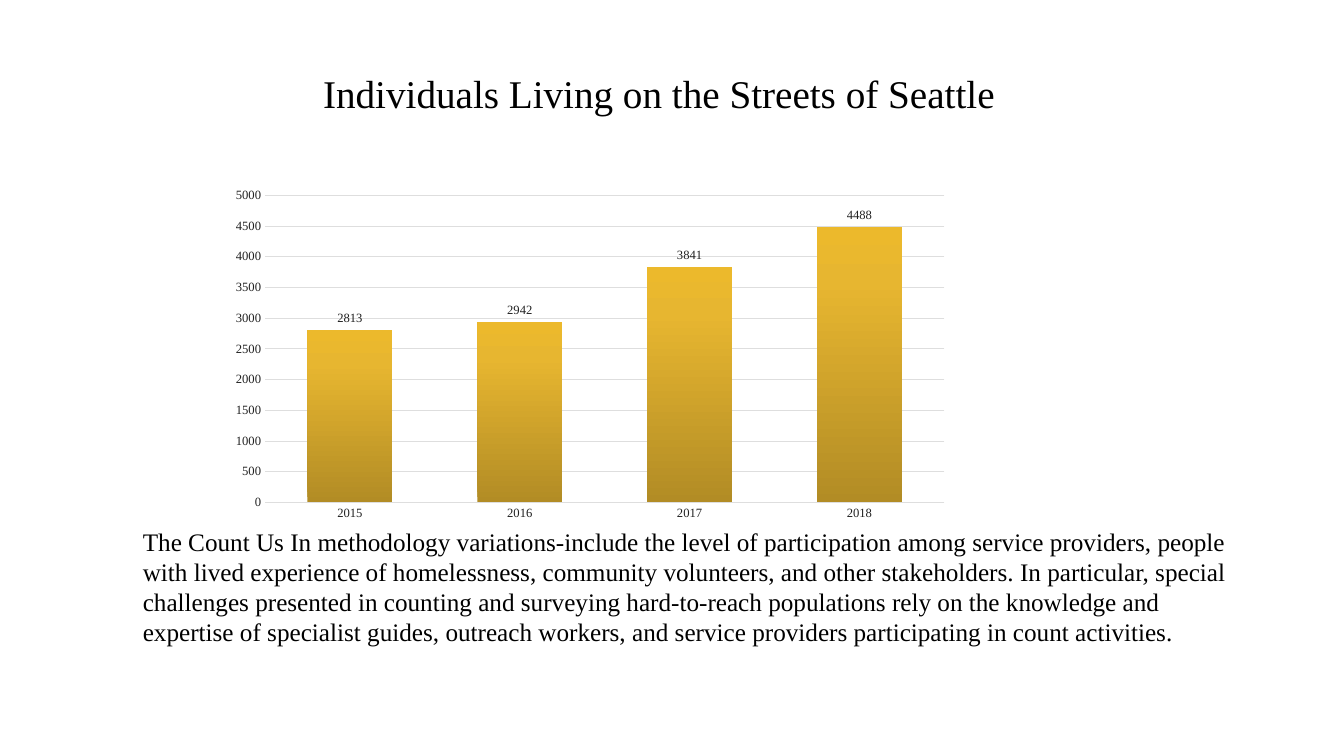
import pptx
import pptx.chart.data
import pptx.dml.color
import pptx.enum.chart
import pptx.enum.text
import pptx.oxml
import pptx.oxml.ns
import pptx.util
from pptx.util import Cm

TITLE = "Individuals Living on the Streets of Seattle "
METHOD_NOTE = (
    "The Count Us In methodology variations-include the level of participation among "
    "service providers, people with lived experience of homelessness, community volunteers, "
    "and other stakeholders. In particular, special challenges presented in counting and "
    "surveying hard-to-reach populations rely on the knowledge and expertise of specialist "
    "guides, outreach workers, and service providers participating in count activities."
)
COUNTS = {"2015": 2813, "2016": 2942, "2017": 3841, "2018": 4488}
FONT = "Times New Roman"
COLORS = {"text": "000000", "axis": "212121", "grid": "DEDEDE"}
BAR_GRADIENT = [(0, "B28C25"), (80, "E7B630"), (100, "ECB92C")]
PLOT_AREA = {"x": 0.046, "y": 0.077, "w": 0.773, "h": 0.56}  # shares of the chart frame
NAMESPACES = pptx.oxml.ns.nsdecls("a", "c")


def rgb(name):
    return pptx.dml.color.RGBColor.from_string(COLORS[name])


def style_font(font, size, color):
    font.name = FONT
    font.size = pptx.util.Pt(size)
    font.color.rgb = rgb(color)


def style_line(line):
    line.color.rgb = rgb("grid")
    line.width = pptx.util.Pt(0.75)


def add_text(slide, frame, text, size, alignment):
    box = slide.shapes.add_textbox(*frame)
    box.text_frame.word_wrap = True
    box.text_frame.auto_size = pptx.enum.text.MSO_AUTO_SIZE.SHAPE_TO_FIT_TEXT
    box.text_frame.text = text
    para = box.text_frame.paragraphs[0]
    para.alignment = alignment
    style_font(para.runs[0].font, size, "text")


def fill_with_gradient(series):
    """Shade the bars from dark at the foot to light at the top."""
    stops = "".join(
        f'<a:gs pos="{share * 1000}"><a:srgbClr val="{color}"/></a:gs>'
        for share, color in BAR_GRADIENT
    )
    gradient = pptx.oxml.parse_xml(
        f"<a:gradFill {NAMESPACES}><a:gsLst>{stops}</a:gsLst>"
        '<a:lin ang="16200000" scaled="0"/></a:gradFill>'
    )
    series.format.line.fill.background()
    series._element.spPr.insert(0, gradient)


def place_plot(chart):
    """Fix the inner plot area inside the chart frame."""
    plot_area = chart._chartSpace.chart.plotArea
    for layout in plot_area.findall(pptx.oxml.ns.qn("c:layout")):
        plot_area.remove(layout)
    modes = "".join(f'<c:{side}Mode val="edge"/>' for side in "xy")
    shares = "".join(f'<c:{key} val="{share}"/>' for key, share in PLOT_AREA.items())
    plot_area.insert(0, pptx.oxml.parse_xml(
        f'<c:layout {NAMESPACES}><c:manualLayout><c:layoutTarget val="inner"/>'
        f"{modes}{shares}</c:manualLayout></c:layout>"
    ))


def add_count_chart(slide, frame):
    data = pptx.chart.data.CategoryChartData()
    data.categories = list(COUNTS)
    data.add_series("Series 1", list(COUNTS.values()))
    kind = pptx.enum.chart.XL_CHART_TYPE.COLUMN_CLUSTERED
    chart = slide.shapes.add_chart(kind, *frame, data).chart
    chart.has_title = False
    chart.has_legend = False
    style_font(chart.font, 10, "text")

    for axis in (chart.category_axis, chart.value_axis):
        axis.major_tick_mark = pptx.enum.chart.XL_TICK_MARK.NONE
        axis.minor_tick_mark = pptx.enum.chart.XL_TICK_MARK.NONE
        style_font(axis.tick_labels.font, 9, "axis")
    style_line(chart.category_axis.format.line)
    chart.value_axis.format.line.fill.background()
    chart.value_axis.minimum_scale = 0
    chart.value_axis.maximum_scale = 5000
    chart.value_axis.major_unit = 500
    chart.value_axis.has_major_gridlines = True
    style_line(chart.value_axis.major_gridlines.format.line)

    plot = chart.plots[0]
    plot.gap_width = 100
    plot.overlap = -24
    plot.vary_by_categories = False
    plot.has_data_labels = True
    labels = plot.data_labels
    labels.show_value = True
    labels.position = pptx.enum.chart.XL_LABEL_POSITION.OUTSIDE_END
    style_font(labels.font, 9, "axis")
    fill_with_gradient(plot.series[0])
    place_plot(chart)


def main():
    deck = pptx.Presentation()
    deck.slide_width, deck.slide_height = Cm(33.87), Cm(19.05)
    slide = deck.slides.add_slide(deck.slide_layouts[6])
    text_width = Cm(28.22)
    align = pptx.enum.text.PP_ALIGN
    add_text(slide, (Cm(2.62), Cm(1.63), text_width, Cm(1.45)), TITLE, 28, align.CENTER)
    add_count_chart(slide, (Cm(5.66), Cm(3.86), Cm(22.15), Cm(13.82)))
    add_text(slide, (Cm(3.35), Cm(13.13), text_width, Cm(3.33)), METHOD_NOTE, 18, align.LEFT)
    deck.save("out.pptx")


if __name__ == "__main__":
    main()
